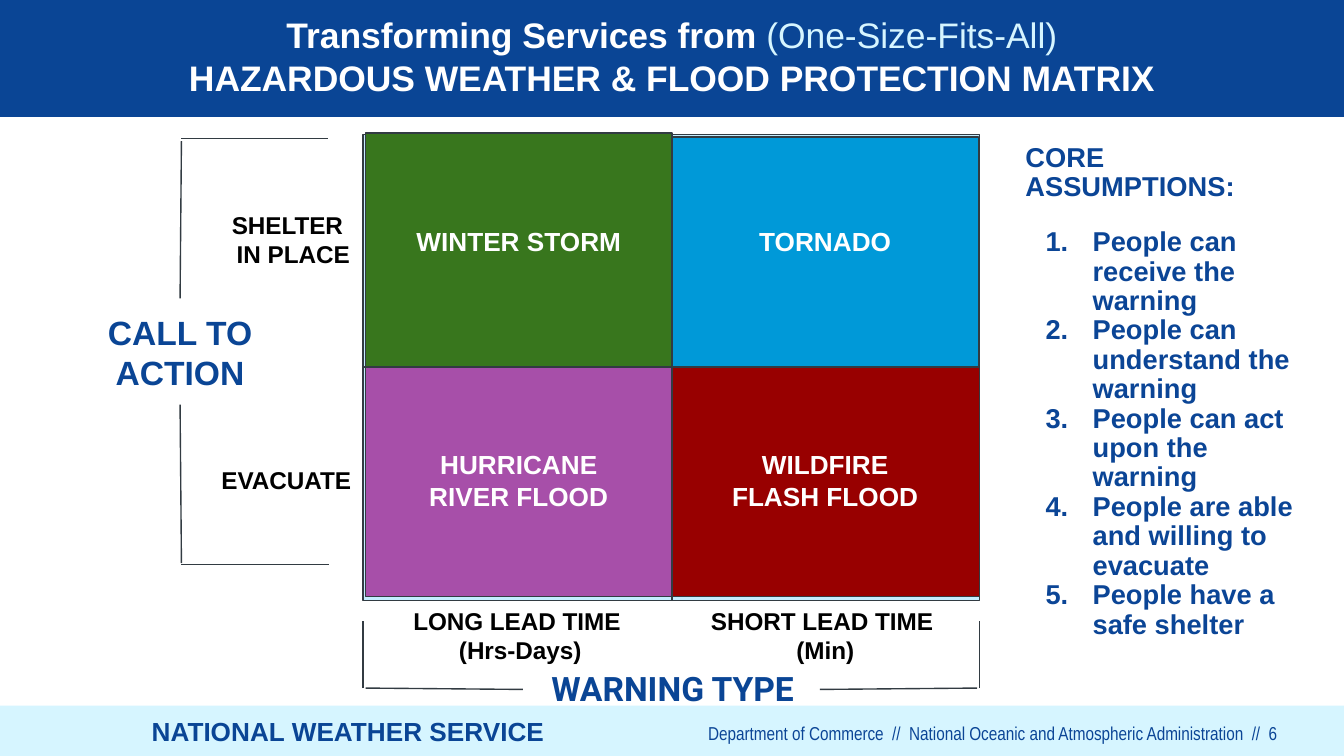
from lxml import etree
from pptx import Presentation
from pptx.dml.color import RGBColor
from pptx.enum.shapes import MSO_CONNECTOR, MSO_SHAPE
from pptx.enum.text import MSO_ANCHOR, PP_ALIGN
from pptx.oxml.ns import qn
from pptx.util import Inches, Pt

RECTANGLE = MSO_SHAPE.RECTANGLE
STRAIGHT = MSO_CONNECTOR.STRAIGHT
TOP, MIDDLE = MSO_ANCHOR.TOP, MSO_ANCHOR.MIDDLE
LEFT, CENTER, RIGHT = PP_ALIGN.LEFT, PP_ALIGN.CENTER, PP_ALIGN.RIGHT

COLORS = {
    "navy": "0A4595", "ink": "0B4596", "ice": "D6F5FF", "pale": "C4EDFF",
    "line": "323B42", "white": "FFFFFF", "black": "000000", "green": "38761D",
    "blue": "0099D8", "purple": "A74FA9", "red": "980000",
}


def color(name):
    return RGBColor.from_string(COLORS[name])


def add_span(para, text, size=14, font="Arial", ink="navy", bold=True):
    span = para.add_run()
    span.text = text
    span.font.size = Pt(size)
    span.font.name = font
    span.font.bold = bold
    span.font.color.rgb = color(ink)


def set_frame(shape, anchor=TOP, inset=(0.1, 0.1)):
    frame = shape.text_frame
    frame.word_wrap = True
    frame.vertical_anchor = anchor
    frame.margin_left = frame.margin_right = Inches(inset[0])
    frame.margin_top = frame.margin_bottom = Inches(inset[1])
    return frame


def add_text(page, box, lines, align=CENTER, anchor=TOP, inset=(0.1, 0.1), **style):
    """Write each line as a paragraph in one text box."""
    shape = page.shapes.add_textbox(*map(Inches, box))
    frame = set_frame(shape, anchor, inset)
    for index, line in enumerate(lines):
        para = frame.add_paragraph() if index else frame.paragraphs[0]
        para.alignment = align
        add_span(para, line, **style)
    return frame


def add_rectangle(page, box, fill, outlined=False):
    shape = page.shapes.add_shape(RECTANGLE, *map(Inches, box))
    shape.shadow.inherit = False
    shape.fill.solid()
    shape.fill.fore_color.rgb = color(fill)
    if outlined:
        shape.line.color.rgb = color("line")
        shape.line.width = Pt(0.75)
    else:
        shape.line.fill.background()
    return shape


def add_lines(page, left, top, segments):
    """Draw segments (x1, y1, x2, y2) measured from left and top."""
    for x1, y1, x2, y2 in segments:
        line = page.shapes.add_connector(
            STRAIGHT, Inches(left + x1), Inches(top + y1),
            Inches(left + x2), Inches(top + y2))
        line.line.color.rgb = color("line")
        line.line.width = Pt(0.75)
        etree.SubElement(line._element.spPr, qn("a:effectLst"))


def add_header(page, box):
    frame = set_frame(add_rectangle(page, box, "navy"))
    first, second = frame.paragraphs[0], frame.add_paragraph()
    first.alignment = second.alignment = CENTER
    add_span(first, "Transforming Services from ", size=19, ink="white")
    add_span(first, "(One-Size-Fits-All)", size=19, ink="ice", bold=False)
    add_span(second, "HAZARDOUS WEATHER & FLOOD PROTECTION MATRIX", size=19, ink="white")


def add_footer(page, box):
    left, top = box[:2]
    add_rectangle(page, box, "ice")
    add_text(page, (left + 1.03, top - 0.03, 3.98, 0.51),
             ["NATIONAL WEATHER SERVICE"], align=LEFT)
    add_text(page, (left + 1.58, top + 0.12, 7.92, 0.13),
             ["Department of Commerce  //  National Oceanic and Atmospheric "
              "Administration  //  6"],
             align=RIGHT, inset=(0, 0), size=10, font="Arial Narrow", ink="ink", bold=False)


def add_assumptions(page, box):
    items = ["People can receive the warning", "People can understand the warning",
             "People can act upon the warning", "People are able and willing to evacuate",
             "People have a safe shelter"]
    frame = add_text(page, box, ["CORE ASSUMPTIONS:"], align=LEFT,
                     inset=(0, 0.05), size=14.6, ink="ink")
    frame.paragraphs[0].line_spacing = 0.9
    for index, item in enumerate(items):
        para = frame.add_paragraph()
        props = para._p.get_or_add_pPr()
        props.set("marL", str(Inches(0.5)))
        props.set("indent", str(Inches(-0.35)))
        bullet_color = etree.SubElement(props, qn("a:buClr"))
        etree.SubElement(bullet_color, qn("a:srgbClr"), val=COLORS["ink"])
        etree.SubElement(props, qn("a:buAutoNum"), type="arabicPeriod")
        para.line_spacing = 0.9
        if index == 0:
            para.space_before = Pt(13.7)
        add_span(para, item, size=14.6, ink="ink")


def add_matrix(page, box):
    left, top, width, height = box
    add_rectangle(page, box, "pale", outlined=True)
    add_lines(page, left, top, [(2.3, 0, 2.3, height), (0, 1.73, width, 1.73)])

    # Cells overlap a little, so they run from back to front
    cells = [
        ((2.3, 0.02, 2.28, 1.71), "blue", ["TORNADO"]),
        ((2.25, 1.73, 2.34, 1.71), "red", ["WILDFIRE", "FLASH FLOOD"]),
        ((0.02, 1.73, 2.28, 1.71), "purple", ["HURRICANE", "RIVER FLOOD"]),
        ((0.02, -0.01, 2.28, 1.74), "green", ["WINTER STORM"]),
    ]
    for (x, y, cell_width, cell_height), fill, _ in cells:
        add_rectangle(page, (left + x, top + y, cell_width, cell_height), fill, outlined=True)
    for (x, y, _, _), _, lines in cells:
        label_left = left + (0.02 if x < 1 else 2.3)
        label_top, label_height = (0.58, 0.44) if y < 1 else (2.24, 0.67)
        add_text(page, (label_left, top + label_top, 2.28, label_height), lines, ink="white")


def add_action_axis(page, box):
    left, top = box[:2]
    label = dict(align=RIGHT, anchor=MIDDLE, size=13, ink="black")
    add_text(page, (left + 0.12, top + 0.53, 2.06, 0.44), ["SHELTER ", "IN PLACE"], **label)
    add_text(page, (left + 0.66, top + 2.32, 1.53, 0.44), ["EVACUATE"], **label)
    add_text(page, (left, top + 1.19, 1.64, 0.81), ["CALL TO ACTION"], size=18)
    add_lines(page, left, top, [
        (0.83, 0, 1.92, 0), (0.83, 0.02, 0.82, 1.19),
        (0.83, 3.17, 1.93, 3.17), (0.83, 3.16, 0.82, 1.98)])


def add_warning_axis(page, box):
    left, top, width, _ = box
    for x, lines in [(0.03, ["LONG LEAD TIME ", "(Hrs-Days)"]),
                     (2.3, ["SHORT LEAD TIME ", "(Min)"])]:
        add_text(page, (left + x, top, 2.28, 0.64), lines,
                 anchor=MIDDLE, size=13, ink="black")
    add_text(page, (left + 0.68, top + 0.46, 3.25, 0.5), ["WARNING TYPE"],
             size=18, font="Roboto")
    add_lines(page, left, top, [
        (0, 0.71, 0, 0.21), (0.02, 0.71, 1.19, 0.72),
        (width, 0.71, width, 0.21), (width - 0.02, 0.71, width - 1.19, 0.72)])


def main():
    deck = Presentation()
    deck.slide_width = Inches(10)
    deck.slide_height = deck.slide_width * 9 // 16
    page = deck.slides.add_slide(deck.slide_layouts[6])
    add_footer(page, (0, 5.25, 10, 0.38))
    add_assumptions(page, (7.63, 1.02, 2.13, 0.63))
    add_matrix(page, (2.7, 1, 4.59, 3.47))
    add_action_axis(page, (0.52, 1.03, 2.18, 3.17))
    add_warning_axis(page, (2.7, 4.41, 4.59, 0.96))
    add_header(page, (0, 0, 10, 0.87))
    deck.save("out.pptx")


if __name__ == "__main__":
    main()
